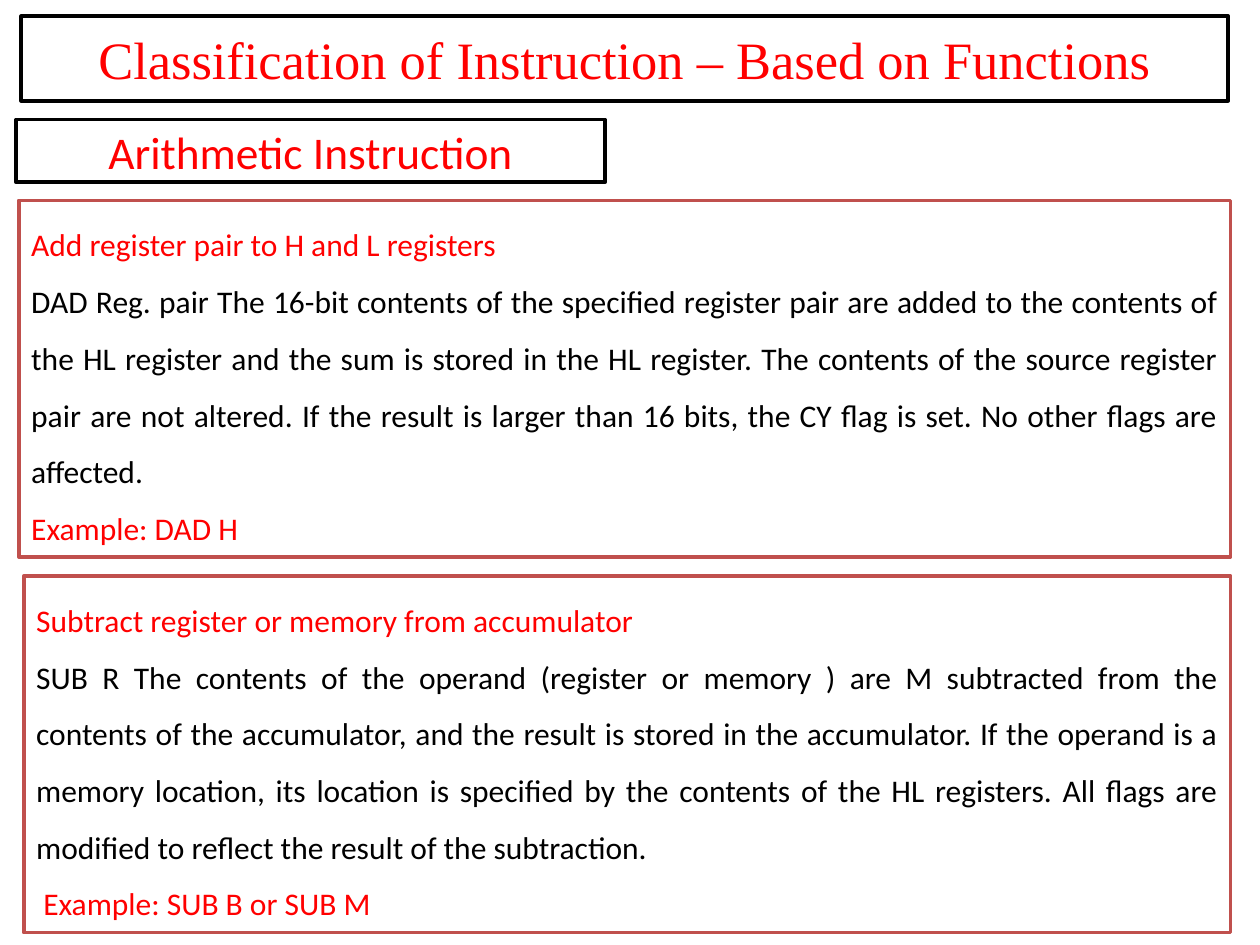
from dataclasses import dataclass

from pptx import Presentation
from pptx.dml.color import RGBColor
from pptx.enum.shapes import MSO_SHAPE
from pptx.enum.text import MSO_ANCHOR, MSO_AUTO_SIZE, PP_ALIGN
from pptx.util import Cm, Pt


@dataclass(frozen=True)
class Theme:
    accent: RGBColor = RGBColor(0xFF, 0x00, 0x00)
    ink: RGBColor = RGBColor(0x00, 0x00, 0x00)
    paper: RGBColor = RGBColor(0xFF, 0xFF, 0xFF)
    panel_border: RGBColor = RGBColor(0xC0, 0x50, 0x4D)
    title_font: str = "Times New Roman"
    body_font: str = "Calibri"
    title_size: float = 30
    subtitle_size: float = 25.9
    body_size: float = 18
    heading_border: float = 2.25
    panel_border_width: float = 2


THEME = Theme()

DAD_TEXT = (
    "DAD Reg. pair The 16-bit contents of the specified register pair are added "
    "to the contents of the HL register and the sum is stored in the HL register. "
    "The contents of the source register pair are not altered. If the result is "
    "larger than 16 bits, the CY flag is set. No other flags are affected."
)
SUB_TEXT = (
    "SUB R The contents of the operand (register or memory ) are M subtracted from "
    "the contents of the accumulator, and the result is stored in the accumulator. "
    "If the operand is a memory location, its location is specified by the contents "
    "of the HL registers. All flags are modified to reflect the result of the "
    "subtraction."
)


def add_box(slide, bounds, border, border_width):
    box = slide.shapes.add_shape(MSO_SHAPE.RECTANGLE, *(Cm(v) for v in bounds))
    box.shadow.inherit = False
    box.line.color.rgb = border
    box.line.width = Pt(border_width)
    box.text_frame.word_wrap = True
    return box


def write(paragraph, text, font, size, color, alignment):
    paragraph.text = text
    paragraph.alignment = alignment
    paragraph.font.name = font
    paragraph.font.size = Pt(size)
    paragraph.font.color.rgb = color


def add_heading(slide, bounds, text, font, size, space_before=0):
    heading = add_box(slide, bounds, THEME.ink, THEME.heading_border)
    heading.fill.background()
    heading.text_frame.vertical_anchor = MSO_ANCHOR.MIDDLE
    line = heading.text_frame.paragraphs[0]
    write(line, text, font, size, THEME.accent, PP_ALIGN.CENTER)
    line.space_before = Pt(space_before)


def add_instruction(slide, bounds, name, description, example):
    """Add a panel with a red name, a black description and a red example."""
    panel = add_box(slide, bounds, THEME.panel_border, THEME.panel_border_width)
    panel.fill.solid()
    panel.fill.fore_color.rgb = THEME.paper
    frame = panel.text_frame
    frame.vertical_anchor = MSO_ANCHOR.TOP
    frame.auto_size = MSO_AUTO_SIZE.SHAPE_TO_FIT_TEXT
    parts = ((name, THEME.accent), (description, THEME.ink), (example, THEME.accent))
    for index, (text, color) in enumerate(parts):
        paragraph = frame.add_paragraph() if index else frame.paragraphs[0]
        write(paragraph, text, THEME.body_font, THEME.body_size, color, PP_ALIGN.JUSTIFY)
        paragraph.line_spacing = 1.5


def main():
    deck = Presentation()
    deck.slide_width, deck.slide_height = Cm(25.4), Cm(19.05)
    slide = deck.slides.add_slide(deck.slide_layouts[6])

    add_heading(slide, (0.43, 0.33, 24.33, 1.7),
                "Classification of Instruction – Based on Functions",
                THEME.title_font, THEME.title_size)
    add_heading(slide, (0.33, 2.41, 11.86, 1.27), "Arithmetic Instruction",
                THEME.body_font, THEME.subtitle_size, space_before=5)
    add_instruction(slide, (0.38, 4.04, 24.43, 7.19),
                    "Add register pair to H and L registers",
                    DAD_TEXT, "Example: DAD H")
    add_instruction(slide, (0.48, 11.61, 24.33, 7.19),
                    "Subtract register or memory from accumulator",
                    SUB_TEXT, " Example: SUB B or SUB M")

    deck.save("out.pptx")


if __name__ == "__main__":
    main()
